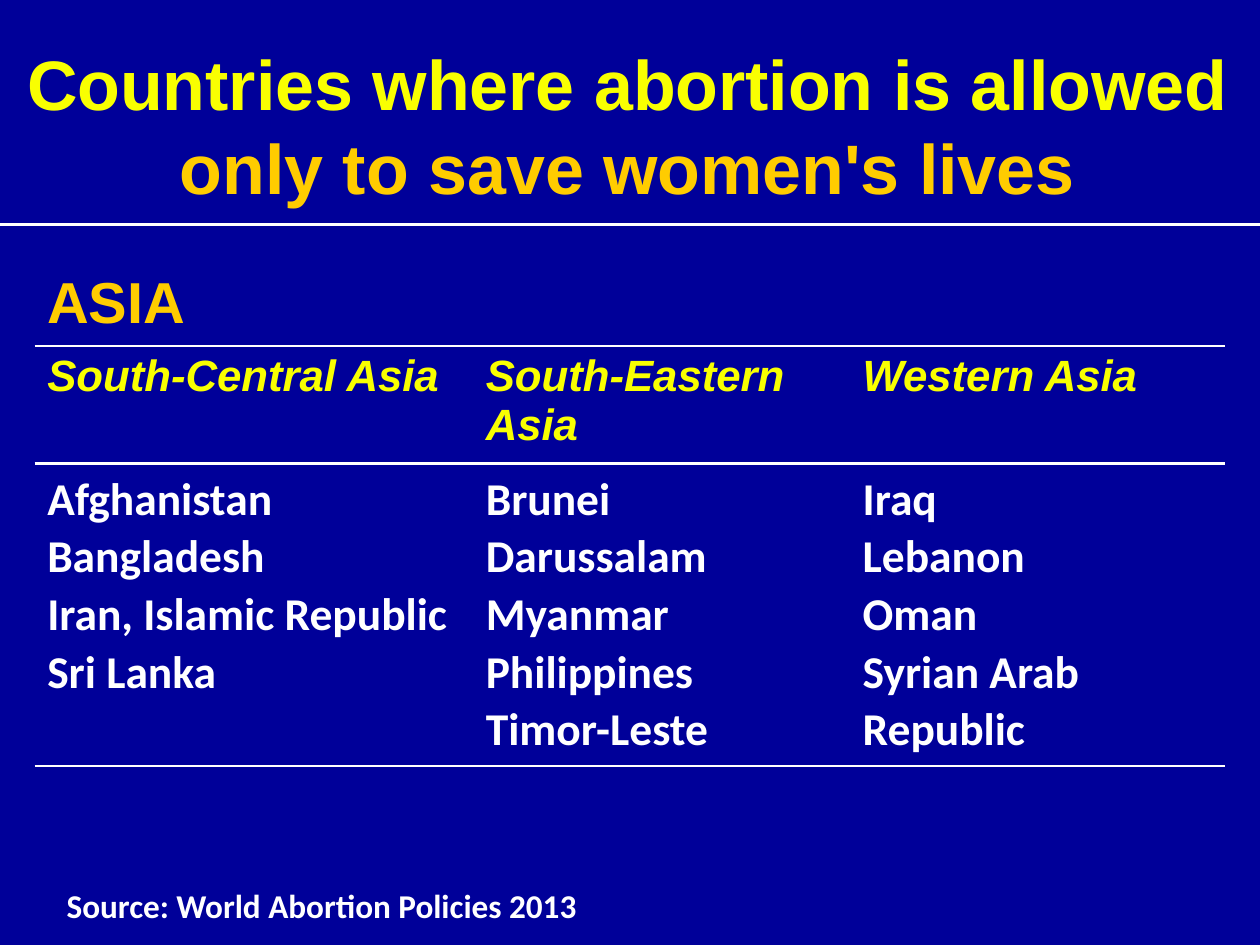
from pptx import Presentation
from pptx.dml.color import RGBColor
from pptx.enum.shapes import MSO_CONNECTOR
from pptx.enum.text import MSO_ANCHOR, PP_ALIGN
from pptx.oxml.ns import qn
from pptx.util import Pt
from lxml import etree

LINE = MSO_CONNECTOR.STRAIGHT
BOTTOM = MSO_ANCHOR.BOTTOM
CENTER, LEFT = PP_ALIGN.CENTER, PP_ALIGN.LEFT

HUES = {"back": "000099", "lemon": "F9FF01", "gold": "FFCC00", "white": "FFFFFF"}

LANDS = {
    "South-Central Asia": ["Afghanistan", "Bangladesh", "Iran, Islamic Republic", "Sri Lanka"],
    "South-Eastern Asia": ["Brunei Darussalam", "Myanmar", "Philippines", "Timor-Leste"],
    "Western Asia": ["Iraq", "Lebanon", "Oman", "Syrian Arab Republic"],
}


def rgb(hue):
    return RGBColor.from_string(HUES[hue])


def write(para, text, size=26, font="Calibri", hue="white", bold=True,
          slant=False, align=LEFT, lead=None):
    para.alignment = align
    if lead:
        para.line_spacing = Pt(lead)
    run = para.add_run()
    run.text = text
    run.font.size = Pt(size)
    run.font.name = font
    run.font.bold = bold
    run.font.italic = slant
    run.font.color.rgb = rgb(hue)


class Deck:
    def __init__(self, wide, high):
        self.prs = Presentation()
        self.prs.slide_width, self.prs.slide_height = Pt(wide), Pt(high)
        self.slide = self.prs.slides.add_slide(self.prs.slide_layouts[5])
        fill = self.slide.background.fill
        fill.solid()
        fill.fore_color.rgb = rgb("back")

    def title(self, box, parts):
        shape = self.slide.shapes.title
        shape.left, shape.top, shape.width, shape.height = map(Pt, box)
        frame = shape.text_frame
        frame.word_wrap = True
        frame.vertical_anchor = BOTTOM
        for text, hue in parts:
            write(frame.paragraphs[0], text, size=40, font="Arial", hue=hue, align=CENTER)

    def text(self, box, text, **style):
        frame = self.slide.shapes.add_textbox(*map(Pt, box)).text_frame
        frame.word_wrap = True
        write(frame.paragraphs[0], text, **style)

    def rule(self, x1, y1, x2, y2, width):
        line = self.slide.shapes.add_connector(LINE, Pt(x1), Pt(y1), Pt(x2), Pt(y2))
        line.line.color.rgb = rgb("white")
        line.line.width = Pt(width)
        etree.SubElement(line._element.spPr, qn("a:effectLst"))

    def edge(self, cell, sides):
        props = cell._tc.get_or_add_tcPr()
        for spot, (side, width) in enumerate(sides.items()):
            line = etree.Element(qn(f"a:ln{side}"), w=str(Pt(width)))
            if width:
                fill = etree.SubElement(line, qn("a:solidFill"))
                etree.SubElement(fill, qn("a:srgbClr"), val=HUES["white"])
            else:
                etree.SubElement(line, qn("a:noFill"))
            props.insert(spot, line)

    def table(self, left, top, cols, rows, lines):
        shape = self.slide.shapes.add_table(
            len(rows), len(cols), Pt(left), Pt(top), Pt(sum(cols)), Pt(sum(rows)))
        grid = shape.table
        grid.first_row = grid.horz_banding = False
        for col, width in zip(grid.columns, cols):
            col.width = Pt(width)
        for row, high in zip(grid.rows, rows):
            row.height = Pt(high)
        for r, row in enumerate(grid.rows):
            for cell in row.cells:
                cell.fill.background()
                self.edge(cell, {"L": 0, "R": 0, "T": lines[r], "B": lines[r + 1]})
        return grid


def main():
    deck = Deck(720, 540)
    deck.title((0, 20, 717, 103), [
        ("Countries where abortion is allowed ", "lemon"),
        ("only to save women's lives", "gold"),
    ])

    grid = deck.table(19.8, 151.2, (250.6, 215.4, 214), (46.5, 67, 173), (0, 1.5, 1.75, 1.5))
    grid.cell(0, 0).merge(grid.cell(0, 2))
    write(grid.cell(0, 0).text_frame.paragraphs[0], "ASIA", size=33, font="Arial", hue="gold")
    for c, (area, names) in enumerate(LANDS.items()):
        write(grid.cell(1, c).text_frame.paragraphs[0], area,
              size=25, font="Arial", hue="lemon", slant=True)
        frame = grid.cell(2, c).text_frame
        for n, name in enumerate(names):
            para = frame.add_paragraph() if n else frame.paragraphs[0]
            write(para, name, lead=33)

    deck.text((31, 502.5, 323, 30), "Source: World Abortion Policies 2013", size=19)
    deck.rule(0, 128.2, 720, 128.2, 1.75)
    deck.prs.save("out.pptx")


if __name__ == "__main__":
    main()
